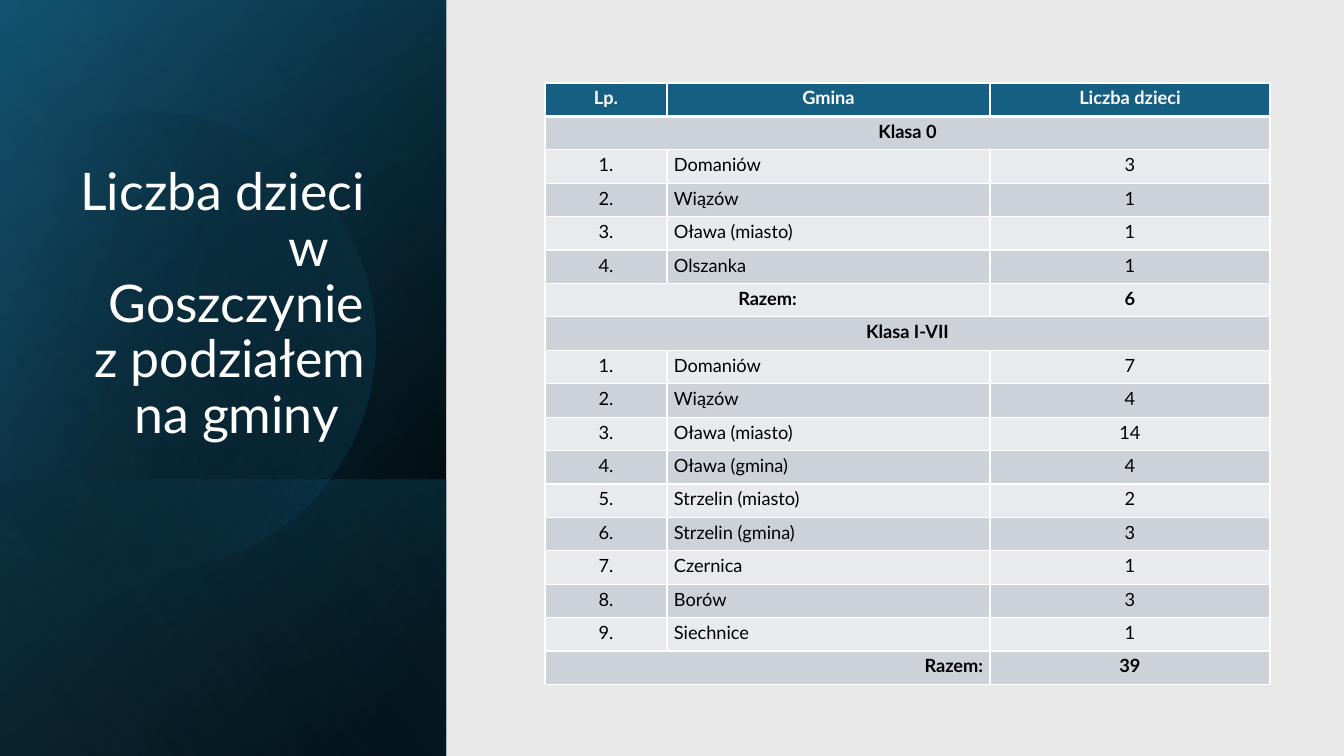
from dataclasses import dataclass
from typing import NamedTuple

from pptx import Presentation
from pptx.dml.color import RGBColor
from pptx.enum.shapes import MSO_SHAPE
from pptx.enum.text import MSO_ANCHOR, PP_ALIGN
from pptx.oxml import parse_xml
from pptx.oxml.ns import nsdecls, qn
from pptx.util import Emu, Pt

EMU_PER_PX = 914400 / 100.8
FONT = "Lato"
COLORS = {
    "background": "E8E8E8",
    "black": "000000",
    "white": "FFFFFF",
    "teal": "156082",
    "deep teal": "104862",
    "sky": "46B1E1",
    "dark band": "CCD2D8",
    "light band": "E8EAED",
}


class Stop(NamedTuple):
    position: int
    color: str
    opacity: int = 100


@dataclass
class Panel:
    """Gradient layer given by its visible box; its frame lies on its side."""
    top: int
    height: int
    angle: int
    stops: list[Stop]


class TitleLine(NamedTuple):
    text: str
    left_indent: int = 0
    right_indent: int = 0


@dataclass
class ClassGroup:
    name: str
    communes: list[tuple[str, int]]
    total: int
    total_align: PP_ALIGN


PANEL_WIDTH = 446
PANELS = [
    Panel(0, 756, 50, [Stop(8, "black"), Stop(100, "deep teal")]),
    Panel(0, 756, 30, [Stop(0, "black", 0), Stop(99, "teal", 46)]),
    Panel(480, 276, 130, [Stop(2, "teal", 29), Stop(100, "black", 30)]),
]
GLOW = Panel(0, 756, 120, [Stop(0, "black", 0), Stop(99, "sky", 11)])
DISC_STOPS = [Stop(29, "black", 0), Stop(100, "teal", 43)]

TITLE = [
    TitleLine("Liczba dzieci", right_indent=28),
    TitleLine("w", left_indent=144),
    TitleLine("Goszczynie"),
    TitleLine("z podziałem", right_indent=13),
    TitleLine("na gminy"),
]

HEADER = ["Lp.", "Gmina", "Liczba dzieci"]
COLUMN_WIDTHS = [122, 323, 280]
GROUPS = [
    ClassGroup("Klasa 0", [
        ("Domaniów", 3), ("Wiązów", 1), ("Oława (miasto)", 1), ("Olszanka", 1),
    ], 6, PP_ALIGN.CENTER),
    ClassGroup("Klasa I-VII", [
        ("Domaniów", 7), ("Wiązów", 4), ("Oława (miasto)", 14),
        ("Oława (gmina)", 4), ("Strzelin (miasto)", 2), ("Strzelin (gmina)", 3),
        ("Czernica", 1), ("Borów", 3), ("Siechnice", 1),
    ], 39, PP_ALIGN.RIGHT),
]


def px(length: float) -> Emu:
    return Emu(round(length * EMU_PER_PX))


def rgb(color: str) -> RGBColor:
    return RGBColor.from_string(COLORS[color])


def paint_gradient(shape, stops: list[Stop], angle: int) -> None:
    stop_xml = "".join(
        f'<a:gs pos="{stop.position * 1000}"><a:srgbClr val="{COLORS[stop.color]}">'
        f'<a:alpha val="{stop.opacity * 1000}"/></a:srgbClr></a:gs>'
        for stop in stops
    )
    shape._element.spPr.append(parse_xml(
        f'<a:gradFill {nsdecls("a")} rotWithShape="1"><a:gsLst>{stop_xml}</a:gsLst>'
        f'<a:lin ang="{angle * 60000}" scaled="0"/></a:gradFill>'
    ))
    shape.line.fill.background()
    shape.shadow.inherit = False


def draw_panel(shapes, panel: Panel) -> None:
    inset = (PANEL_WIDTH - panel.height) / 2
    layer = shapes.add_shape(MSO_SHAPE.RECTANGLE, px(inset), px(panel.top - inset),
                             px(panel.height), px(PANEL_WIDTH))
    layer.rotation = 90
    layer._element.spPr.xfrm.set("flipH", "1")
    paint_gradient(layer, panel.stops, panel.angle)


def draw_disc(shapes) -> None:
    left, top, width, radius = -55, 107, 430, 230
    right, bottom = left + width, top + 2 * radius
    builder = shapes.build_freeform(left, top, scale=EMU_PER_PX)
    builder.add_line_segments([(right, top), (right, bottom), (left, bottom)])
    disc = builder.convert_to_shape()
    # Round the outline into one arc closed by a chord
    outline = next(disc._element.iter(qn("a:path")))
    outline.set("w", str(width))
    outline.set("h", str(2 * radius))
    for step in list(outline):
        outline.remove(step)
    for step_xml in (
        f'<a:moveTo {nsdecls("a")}><a:pt x="92" y="27"/></a:moveTo>',
        f'<a:arcTo {nsdecls("a")} wR="{radius}" hR="{radius}"'
        f' stAng="{242 * 60000}" swAng="{268 * 60000}"/>',
        f'<a:close {nsdecls("a")}/>',
    ):
        outline.append(parse_xml(step_xml))
    disc.rotation = 343.9
    paint_gradient(disc, DISC_STOPS, 30)


def draw_title(shapes) -> None:
    frame = shapes.add_textbox(px(65), px(185), px(343), px(265)).text_frame
    frame.word_wrap = True
    frame.vertical_anchor = MSO_ANCHOR.BOTTOM
    for index, line in enumerate(TITLE):
        paragraph = frame.add_paragraph() if index else frame.paragraphs[0]
        paragraph.text = line.text
        paragraph.alignment = PP_ALIGN.CENTER
        paragraph.line_spacing = 0.9
        paragraph.font.name, paragraph.font.size = FONT, Pt(37)
        paragraph.font.color.rgb = rgb("white")
        properties = paragraph._p.get_or_add_pPr()
        properties.set("marL", str(px(line.left_indent)))
        properties.set("marR", str(px(line.right_indent)))


def style_cell(cell, row: int) -> None:
    thick_side = {0: "B", 1: "T"}.get(row)
    for side in "LRTB":
        width = Pt(3 if side == thick_side else 1)
        cell._tc.get_or_add_tcPr().append(parse_xml(
            f'<a:ln{side} {nsdecls("a")} w="{width}"><a:solidFill>'
            f'<a:srgbClr val="{COLORS["white"]}"/></a:solidFill></a:ln{side}>'
        ))
    cell.fill.solid()
    band = "dark band" if row % 2 else "light band"
    cell.fill.fore_color.rgb = rgb(band if row else "teal")
    cell.margin_left = cell.margin_right = px(7)
    cell.margin_top = cell.margin_bottom = px(4)


def write_cell(cell, text: str, align: PP_ALIGN = PP_ALIGN.CENTER,
               bold: bool = False, color: str = "black") -> None:
    paragraph = cell.text_frame.paragraphs[0]
    paragraph.text = text
    paragraph.alignment = align
    font = paragraph.font
    font.name, font.size, font.bold = FONT, Pt(13), bold
    font.color.rgb = rgb(color)


def draw_table(shapes) -> None:
    row_count = 1 + sum(len(group.communes) + 2 for group in GROUPS)
    table = shapes.add_table(row_count, len(HEADER), px(545), px(83),
                             px(sum(COLUMN_WIDTHS)), px(602)).table
    table.horz_banding = False
    for column, width in zip(table.columns, COLUMN_WIDTHS):
        column.width = px(width)
    for row in range(row_count):
        for column in range(len(HEADER)):
            style_cell(table.cell(row, column), row)

    for column, heading in enumerate(HEADER):
        write_cell(table.cell(0, column), heading, bold=True, color="white")
    row = 1
    for group in GROUPS:
        table.cell(row, 0).merge(table.cell(row, 2))
        write_cell(table.cell(row, 0), group.name, bold=True)
        for number, (commune, children) in enumerate(group.communes, 1):
            row += 1
            write_cell(table.cell(row, 0), f"{number}.")
            write_cell(table.cell(row, 1), commune, PP_ALIGN.LEFT)
            write_cell(table.cell(row, 2), str(children))
        row += 1
        table.cell(row, 0).merge(table.cell(row, 1))
        write_cell(table.cell(row, 0), "Razem:", group.total_align, bold=True)
        write_cell(table.cell(row, 2), str(group.total), bold=True)
        row += 1


def main() -> None:
    deck = Presentation()
    deck.slide_width, deck.slide_height = px(1344), px(756)
    slide = deck.slides.add_slide(deck.slide_layouts[6])
    slide.background.fill.solid()
    slide.background.fill.fore_color.rgb = rgb("background")
    # Left panel
    for panel in PANELS:
        draw_panel(slide.shapes, panel)
    draw_disc(slide.shapes)
    draw_panel(slide.shapes, GLOW)
    # Content
    draw_title(slide.shapes)
    draw_table(slide.shapes)
    deck.save("out.pptx")


if __name__ == "__main__":
    main()
